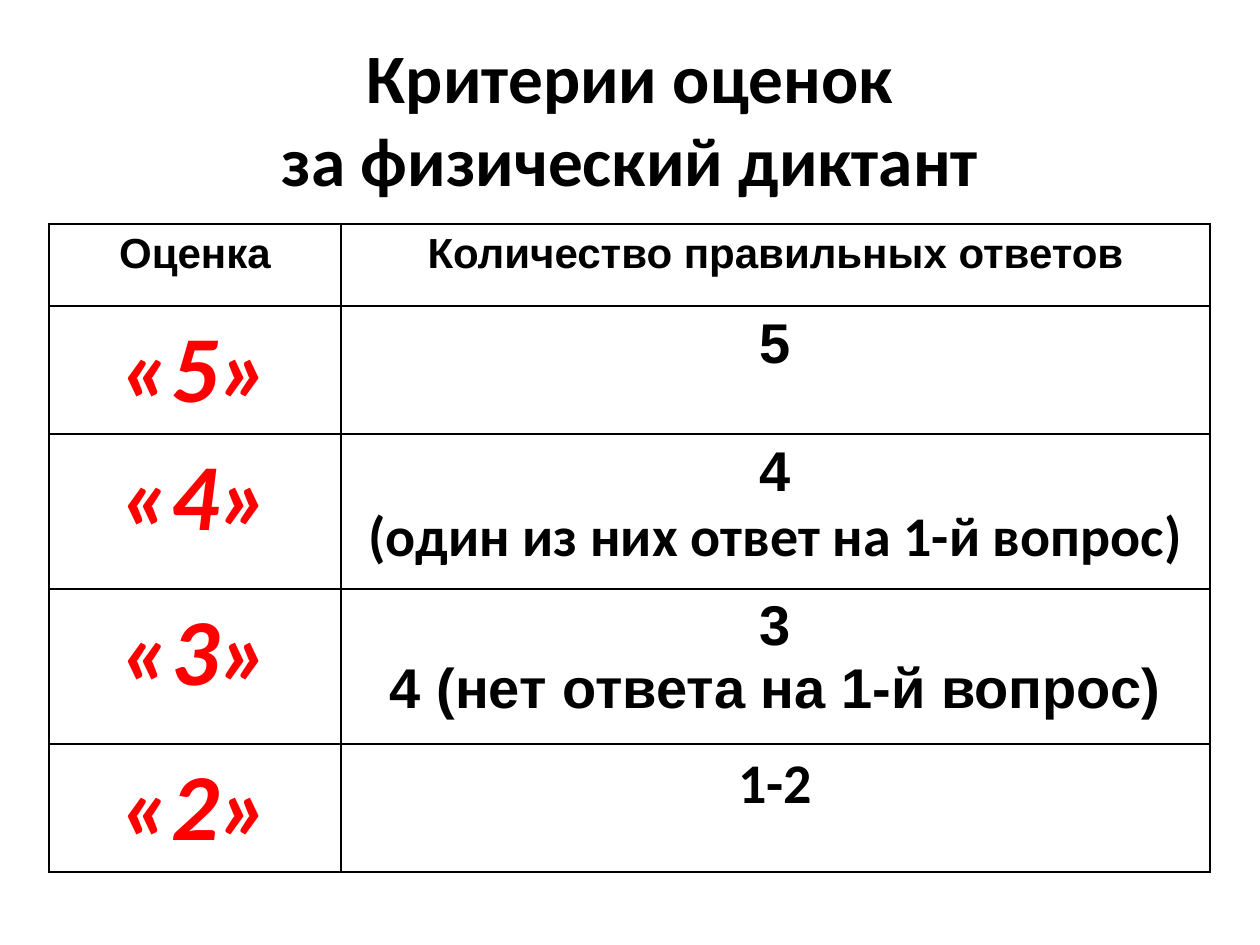
from lxml import etree
from pptx import Presentation
from pptx.dml.color import RGBColor
from pptx.enum.text import MSO_ANCHOR, PP_ALIGN
from pptx.oxml.ns import qn
from pptx.util import Emu, Pt

PX = 914400 // 126
CENTER = PP_ALIGN.CENTER
MIDDLE = MSO_ANCHOR.MIDDLE
TITLE_ONLY = 5

COLORS = {"text": "000000", "grade": "FF0000", "border": "000000", "paper": "FFFFFF"}
COLUMN_WIDTHS = [292, 869]
ROW_HEIGHTS = [82, 128, 155, 155, 128]
TITLE_LINES = ["Критерии оценок", "за физический диктант"]
HEADERS = ["Оценка", "Количество правильных ответов"]
CRITERIA = [
    ("«5»", [("5", "Arial")]),
    ("«4»", [("4", "Arial"), ("(один из них ответ на 1-й вопрос)", "Calibri")]),
    ("«3»", [("3", "Arial"), ("4 (нет ответа на 1-й вопрос)", "Arial")]),
    ("«2»", [("1-2", "Calibri")]),
]


def px(length):
    return Emu(length * PX)


def add_run(paragraph, text, size, font, color="text", italic=False):
    run = paragraph.add_run()
    run.text = text
    run.font.size = Pt(size)
    run.font.name = font
    run.font.bold = True
    run.font.italic = italic
    run.font.color.rgb = RGBColor.from_string(COLORS[color])


def add_title(slide):
    title = slide.shapes.title
    title.left, title.top, title.width, title.height = map(px, (63, 38, 1134, 158))
    frame = title.text_frame
    frame.word_wrap = True
    frame.vertical_anchor = MIDDLE
    paragraph = frame.paragraphs[0]
    paragraph.alignment = CENTER
    for index, line in enumerate(TITLE_LINES):
        if index:
            paragraph.add_line_break()
        add_run(paragraph, line, 39.6, "Calibri")


def style_cell(cell):
    """Draw the four borders, then the fill, in the order the schema requires."""
    properties = cell._tc.get_or_add_tcPr()
    for side in ("a:lnL", "a:lnR", "a:lnT", "a:lnB"):
        line = etree.SubElement(properties, qn(side), w=str(Pt(1)))
        fill = etree.SubElement(line, qn("a:solidFill"))
        etree.SubElement(fill, qn("a:srgbClr"), val=COLORS["border"])
    cell.fill.solid()
    cell.fill.fore_color.rgb = RGBColor.from_string(COLORS["paper"])


def fill_cell(cell, lines, size, color="text", italic=False):
    """Write one centred paragraph for each (text, font) pair."""
    style_cell(cell)
    frame = cell.text_frame
    for index, (text, font) in enumerate(lines):
        paragraph = frame.add_paragraph() if index else frame.paragraphs[0]
        paragraph.alignment = CENTER
        add_run(paragraph, text, size, font, color, italic)


def add_criteria_table(slide):
    table = slide.shapes.add_table(
        len(ROW_HEIGHTS), len(COLUMN_WIDTHS), px(49), px(224),
        px(sum(COLUMN_WIDTHS)), px(sum(ROW_HEIGHTS))).table
    for column, width in zip(table.columns, COLUMN_WIDTHS):
        column.width = px(width)
    for row, height in zip(table.rows, ROW_HEIGHTS):
        row.height = px(height)
    for column, header in enumerate(HEADERS):
        fill_cell(table.cell(0, column), [(header, "Arial")], 24)
    for row, (grade, answers) in enumerate(CRITERIA, start=1):
        fill_cell(table.cell(row, 0), [(grade, "Calibri")], 54, "grade", italic=True)
        fill_cell(table.cell(row, 1), answers, 32)


def main():
    presentation = Presentation()
    presentation.slide_width = px(1260)
    presentation.slide_height = px(945)
    slide = presentation.slides.add_slide(presentation.slide_layouts[TITLE_ONLY])
    add_title(slide)
    add_criteria_table(slide)
    presentation.save("out.pptx")


if __name__ == "__main__":
    main()
